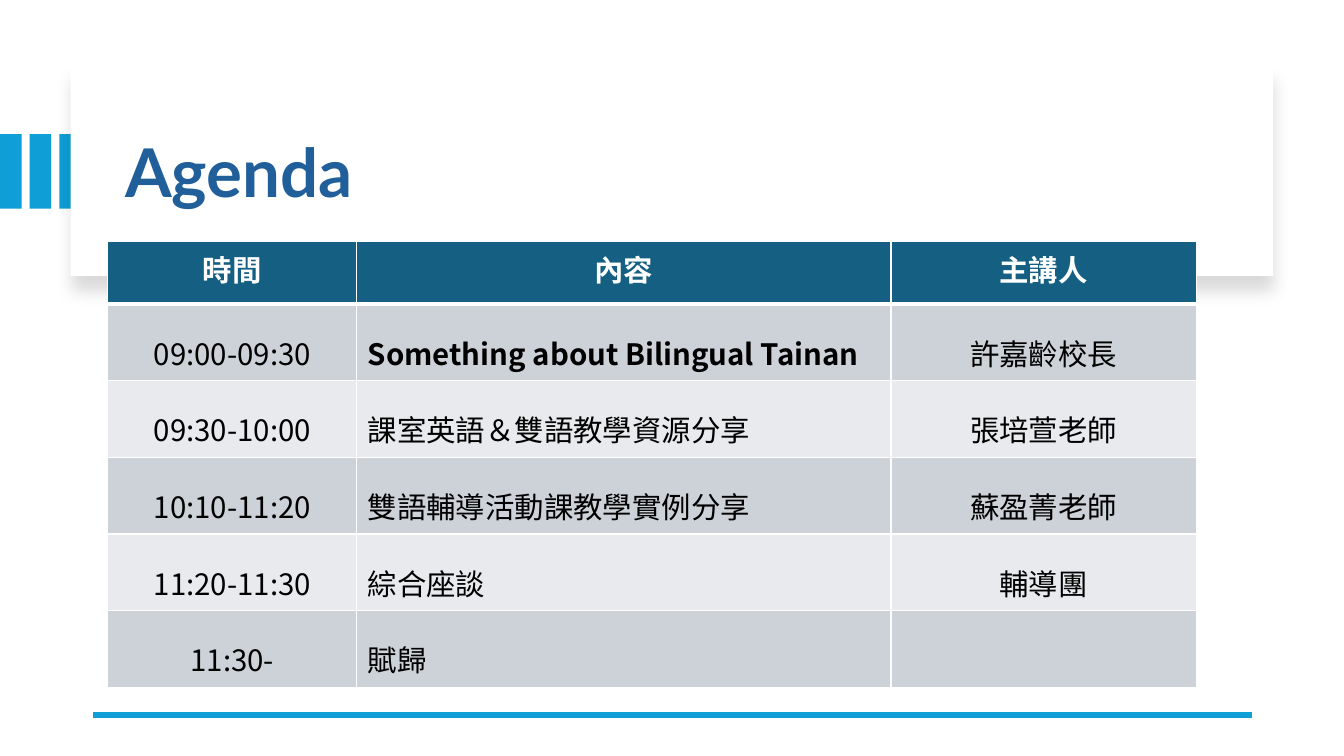
from dataclasses import dataclass

from lxml.etree import SubElement
from pptx import Presentation
from pptx.dml.color import RGBColor
from pptx.enum.shapes import MSO_CONNECTOR, MSO_SHAPE
from pptx.enum.text import MSO_ANCHOR, MSO_AUTO_SIZE, PP_ALIGN
from pptx.oxml import parse_xml
from pptx.oxml.ns import nsdecls, qn
from pptx.util import Pt


@dataclass(frozen=True)
class Theme:
    """Colours, fonts and type sizes of the slide."""
    accent: str = "0F9ED5"
    title: str = "215F9A"
    header: str = "156082"
    bands: tuple = ("CCD2D8", "E8EAED")
    white: str = "FFFFFF"
    black: str = "000000"
    title_font: str = "Lato"
    table_font: str = "Noto Sans CJK TC"
    title_size: int = 48
    table_size: int = 21


THEME = Theme()
HEADINGS = ("時間", "內容", "主講人")
SESSIONS = (
    ("09:00-09:30", "Something about Bilingual Tainan", "許嘉齡校長"),
    ("09:30-10:00", "課室英語＆雙語教學資源分享", "張培萱老師"),
    ("10:10-11:20", "雙語輔導活動課教學實例分享", "蘇盈菁老師"),
    ("11:20-11:30", "綜合座談", "輔導團"),
    ("11:30-", "賦歸", ""),
)
COLUMN_WIDTHS = (177.8, 381.6, 218.2)
HEADER_HEIGHT, SESSION_HEIGHT = 44.6, 54.8
TOPIC_COLUMN = 1


def style_paragraph(paragraph, font_name, size, color, bold):
    """Set one font on a whole paragraph, for Latin and East Asian text."""
    font = paragraph.font
    font.name, font.size, font.bold = font_name, Pt(size), bold
    font.color.rgb = RGBColor.from_string(color)
    for latin in paragraph._p.iter(qn("a:latin")):
        latin.addnext(parse_xml(f'<a:ea {nsdecls("a")} typeface="{font_name}"/>'))


def add_rectangle(slide, left, top, width, height, color):
    """Add a plain filled rectangle without outline."""
    shape = slide.shapes.add_shape(
        MSO_SHAPE.RECTANGLE, Pt(left), Pt(top), Pt(width), Pt(height))
    shape.shadow.inherit = False
    shape.fill.solid()
    shape.fill.fore_color.rgb = RGBColor.from_string(color)
    shape.line.fill.background()
    return shape


def add_soft_shadow(shape):
    """Give a shape a faint shadow that falls downwards."""
    effects = shape.element.spPr.find(qn("a:effectLst"))
    effects.append(parse_xml(
        f'<a:outerShdw {nsdecls("a")} blurRad="{Pt(11)}" dist="{Pt(10)}" '
        f'dir="5400000" algn="t" rotWithShape="0"><a:srgbClr val="{THEME.black}">'
        '<a:alpha val="15000"/></a:srgbClr></a:outerShdw>'))


def add_title_card(slide):
    """Place the accent bars and the white card behind the title."""
    bars = [add_rectangle(slide, 21.2 * index, 95.8, 15.4, 53.3, THEME.accent)
            for index in range(3)]
    card = add_rectangle(slide, 50.4, 48.2, 859, 149, THEME.white)
    add_soft_shadow(card)
    for shape in (*bars, card):
        slide.shapes.title.element.addprevious(shape.element)


def fill_title(slide, text):
    """Move and format the title placeholder."""
    title = slide.shapes.title
    title.left, title.top = Pt(82.1), Pt(64.1)
    title.width, title.height = Pt(801.4), Pt(122.4)
    frame = title.text_frame
    frame.text = text
    frame.auto_size = MSO_AUTO_SIZE.NONE
    frame.vertical_anchor = MSO_ANCHOR.MIDDLE
    paragraph = frame.paragraphs[0]
    paragraph.alignment = PP_ALIGN.LEFT
    paragraph.line_spacing = 0.9
    style_paragraph(paragraph, THEME.title_font, THEME.title_size, THEME.title, True)


def add_footer_line(slide):
    """Draw the accent line under the table."""
    line = slide.shapes.add_connector(
        MSO_CONNECTOR.STRAIGHT, Pt(894.2), Pt(510.5), Pt(66.2), Pt(510.5))
    line.line.color.rgb = RGBColor.from_string(THEME.accent)
    line.line.width = Pt(4.5)
    SubElement(line.element.spPr, qn("a:effectLst"))


def set_borders(cell, top_width, bottom_width):
    """Give a cell white borders on its four sides."""
    properties = cell._tc.get_or_add_tcPr()
    widths = {"lnL": 1, "lnR": 1, "lnT": top_width, "lnB": bottom_width}
    for position, (side, width) in enumerate(widths.items()):
        properties.insert(position, parse_xml(
            f'<a:{side} {nsdecls("a")} w="{Pt(width)}"><a:solidFill>'
            f'<a:srgbClr val="{THEME.white}"/></a:solidFill></a:{side}>'))


def fill_cell(cell, text, row, column):
    """Write and format one table cell according to its row and column."""
    is_header = row == 0
    cell.text = text
    cell.margin_left = cell.margin_right = Pt(7.9)
    cell.margin_top = cell.margin_bottom = Pt(4.3)
    cell.fill.solid()
    fill = THEME.header if is_header else THEME.bands[(row - 1) % 2]
    cell.fill.fore_color.rgb = RGBColor.from_string(fill)
    set_borders(cell, 3 if row == 1 else 1, 3 if is_header else 1)
    paragraph = cell.text_frame.paragraphs[0]
    is_topic = column == TOPIC_COLUMN and not is_header
    paragraph.alignment = PP_ALIGN.LEFT if is_topic else PP_ALIGN.CENTER
    paragraph.line_spacing = 1.0 if is_header else 1.5
    style_paragraph(paragraph, THEME.table_font, THEME.table_size,
                    THEME.white if is_header else THEME.black,
                    is_header or (is_topic and row == 1))


def add_agenda_table(slide):
    """Add the table of times, topics and speakers."""
    rows = (HEADINGS, *SESSIONS)
    heights = [HEADER_HEIGHT] + [SESSION_HEIGHT] * len(SESSIONS)
    table = slide.shapes.add_table(
        len(rows), len(HEADINGS), Pt(77), Pt(172.4),
        Pt(sum(COLUMN_WIDTHS)), Pt(sum(heights))).table
    for column, width in zip(table.columns, COLUMN_WIDTHS):
        column.width = Pt(width)
    for row, (texts, height) in enumerate(zip(rows, heights)):
        table.rows[row].height = Pt(height)
        for column, text in enumerate(texts):
            fill_cell(table.cell(row, column), text, row, column)


def main():
    """Build the agenda slide and save it."""
    presentation = Presentation()
    presentation.slide_width, presentation.slide_height = Pt(960), Pt(540)
    slide = presentation.slides.add_slide(presentation.slide_layouts[5])
    add_title_card(slide)
    fill_title(slide, "Agenda")
    add_footer_line(slide)
    add_agenda_table(slide)
    presentation.save("out.pptx")


if __name__ == "__main__":
    main()
